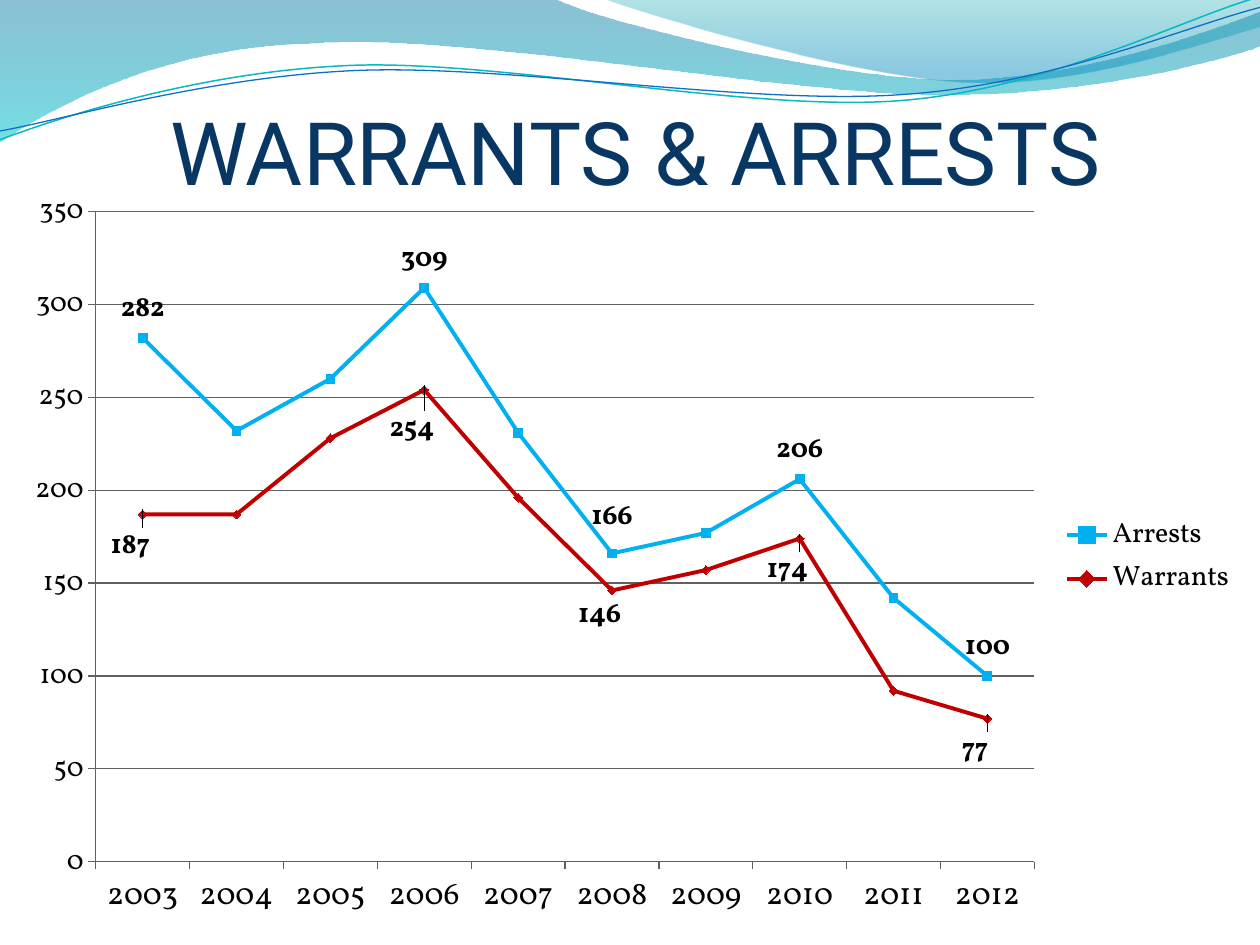
from math import cos, radians, sin

from lxml.etree import SubElement
from pptx import Presentation
from pptx.chart.data import CategoryChartData
from pptx.dml.color import RGBColor
from pptx.enum.chart import (XL_CHART_TYPE, XL_LABEL_POSITION, XL_LEGEND_POSITION,
                             XL_MARKER_STYLE, XL_TICK_MARK)
from pptx.enum.text import MSO_ANCHOR, MSO_AUTO_SIZE, PP_ALIGN
from pptx.oxml import parse_xml
from pptx.oxml.ns import nsdecls, qn
from pptx.util import Inches, Pt

COLORS = {
    "title": "083763", "text": "000000", "grid": "606060",
    "arrests": "00B0F0", "warrants": "C00000",
    "deep": "0074A1", "aqua": "00C6CF", "teal": "00A1A9", "sky": "008BBF",
    "teal_line": "0AB8BF", "blue_line": "0F6FC6",
}
YEARS = [str(year) for year in range(2003, 2013)]
LABELLED_YEARS = ["2003", "2006", "2008", "2010", "2012"]
ARRESTS = [282, 232, 260, 309, 231, 166, 177, 206, 142, 100]
WARRANTS = [187, 187, 228, 254, 196, 146, 157, 174, 92, 77]
ARREST_SHIFTS = {"2008": (0, -0.01)}
WARRANT_SHIFTS = {"2003": (-0.01, 0.08), "2006": (-0.01, 0.09), "2008": (-0.01, 0.07),
                  "2010": (-0.01, 0.08), "2012": (-0.01, 0.08)}
CHART_BOX = (0.08, 1.42, 9.83, 6)
PLOT_BOX = (0.76, 1.68, 7.45, 5.16)
RIPPLE_TILT = 2.7

LEFT_WAVE = [
    [(0, 0)], [(4.4, -0.01)],
    [(4.76, 0.17), (6.64, 0.63), (7.58, 0.63)],
    [(8.53, 0.63), (9.58, 0.26), (10, 0.09)], [(10.01, 0.36)],
    [(9.83, 0.44), (8.7, 0.76), (7.46, 0.75)],
    [(6.22, 0.75), (3.82, 0.28), (2.57, 0.34)],
    [(1.29, 0.36), (0.46, 0.83), (-0.01, 1.13)],
]
RIGHT_WAVE = [
    [(4.79, -0.01)],
    [(5.09, 0.11), (6.82, 0.62), (7.69, 0.65)],
    [(8.56, 0.69), (9.61, 0.32), (10, 0.21)], [(10, 0)],
]
TEAL_RIPPLE = [
    [(0, 1.11)],
    [(0.48, 0.93), (1.58, 0.57), (2.77, 0.52)],
    [(3.95, 0.47), (5.93, 0.89), (7.13, 0.8)],
    [(8.33, 0.71), (9.38, 0.15), (9.98, -0.02)],
]
BLUE_RIPPLE = [
    [(0, 1.04)],
    [(0.47, 0.96), (1.64, 0.61), (2.83, 0.56)],
    [(4.03, 0.51), (5.97, 0.84), (7.17, 0.75)],
    [(8.36, 0.67), (9.41, 0.21), (10, 0.06)],
]


def rgb(name):
    return RGBColor.from_string(COLORS[name])


def add_curve(shapes, segments, close):
    start, *rest = [(Inches(x), Inches(y)) for segment in segments for x, y in segment]
    builder = shapes.build_freeform(*start)
    builder.add_line_segments(rest, close=close)
    curve = builder.convert_to_shape()
    curve.shadow.inherit = False
    lines = iter(list(curve._element.iter(qn("a:lnTo"))))
    for segment in segments[1:]:
        first, *others = [next(lines) for _ in segment]
        if others:
            first.tag = qn("a:cubicBezTo")
            for line in others:
                first.append(line[0])
                line.getparent().remove(line)
    return curve


def add_wave(slide, segments, stops):
    wave = add_curve(slide.shapes, segments, True)
    wave.line.fill.background()
    wave.fill.gradient()
    wave.fill.gradient_angle = 270
    for stop, (position, color, _) in zip(wave.fill.gradient_stops, stops):
        stop.position = position
        stop.color.rgb = rgb(color)
    gradient = wave._element.spPr.find(qn("a:gradFill"))
    for tint, (_, _, opacity) in zip(gradient.iter(qn("a:srgbClr")), stops):
        SubElement(tint, qn("a:alpha")).set("val", str(opacity * 1000))


def level_segments(segments):
    (left, first_y), (right, last_y) = segments[0][0], segments[-1][-1]
    middle_x, middle_y = (left + right) / 2, (first_y + last_y) / 2
    c, s = cos(radians(RIPPLE_TILT)), sin(radians(RIPPLE_TILT))
    return [[(middle_x + (x - middle_x) * c - (y - middle_y) * s,
              middle_y + (x - middle_x) * s + (y - middle_y) * c) for x, y in segment]
            for segment in segments]


def add_ripple(group, segments, color, width):
    ripple = add_curve(group.shapes, level_segments(segments), False)
    ripple.rotation = 360 - RIPPLE_TILT
    ripple.fill.background()
    ripple.line.color.rgb = rgb(color)
    ripple.line.width = Pt(width)


def set_font(font, size, color="text", name="Vollkorn", bold=False):
    font.size = Pt(size)
    font.name = name
    font.bold = bold
    font.color.rgb = rgb(color)


def set_title(slide, wording):
    title = slide.shapes.title
    title.left, title.top = Inches(0.17), Inches(0.67)
    title.width, title.height = Inches(9.75), Inches(0.94)
    frame = title.text_frame
    frame.text = wording
    frame.word_wrap = True
    frame.auto_size = MSO_AUTO_SIZE.NONE
    frame.vertical_anchor = MSO_ANCHOR.BOTTOM
    frame.margin_left = frame.margin_right = frame.margin_bottom = 0
    frame.margin_top = Inches(0.05)
    heading = frame.paragraphs[0]
    heading.alignment = PP_ALIGN.CENTER
    set_font(heading.runs[0].font, 50, "title", "Roboto")
    slide.shapes._spTree.append(title._element)


def set_layout(parent, index, **settings):
    old = parent.find(qn("c:layout"))
    if old is not None:
        parent.remove(old)
    rows = "".join(f'<c:{key} val="{value}"/>' for key, value in settings.items())
    parent.insert(index, parse_xml(
        f'<c:layout {nsdecls("c")}><c:manualLayout>{rows}</c:manualLayout></c:layout>'))


def style_axis(axis, size):
    set_font(axis.tick_labels.font, size)
    axis.major_tick_mark = XL_TICK_MARK.OUTSIDE
    axis.minor_tick_mark = XL_TICK_MARK.NONE
    axis.format.line.color.rgb = rgb("grid")
    axis.format.line.width = Pt(0.75)


def label_points(series, shifts):
    set_font(series.data_labels.font, 16, bold=True)
    series.data_labels.show_value = True
    series.data_labels.position = XL_LABEL_POSITION.ABOVE
    for index, year in enumerate(YEARS):
        if year not in LABELLED_YEARS or year in shifts:
            label = series.points[index].data_label
            set_font(label.font, 16, bold=True)
            label.position = XL_LABEL_POSITION.ABOVE
    for entry in series._element.iter(qn("c:dLbl")):
        year = YEARS[int(entry[0].get("val"))]
        if year in shifts:
            x, y = shifts[year]
            set_layout(entry, 1, x=x, y=y)
        else:
            del entry[1:]
            SubElement(entry, qn("c:delete")).set("val", "1")


def style_series(series, color, marker):
    series.smooth = False
    series.format.line.color.rgb = rgb(color)
    series.format.line.width = Pt(2.25)
    series.marker.style = marker
    series.marker.size = 5
    series.marker.format.fill.solid()
    series.marker.format.fill.fore_color.rgb = rgb(color)
    series.marker.format.line.color.rgb = rgb(color)


def add_line_chart(slide):
    counts = CategoryChartData()
    counts.categories = YEARS
    counts.add_series("Arrests", ARRESTS)
    counts.add_series("Warrants", WARRANTS)
    left, top, width, height = CHART_BOX
    chart = slide.shapes.add_chart(XL_CHART_TYPE.LINE_MARKERS, *map(Inches, CHART_BOX), counts).chart
    chart.has_title = False
    set_font(chart.font, 10)
    chart.plots[0].vary_by_categories = False
    style_axis(chart.category_axis, 18)
    style_axis(chart.value_axis, 16)
    gridlines = chart.value_axis.major_gridlines.format.line
    gridlines.color.rgb = rgb("grid")
    gridlines.width = Pt(0.75)
    chart.has_legend = True
    chart.legend.position = XL_LEGEND_POSITION.RIGHT
    chart.legend.include_in_layout = False
    set_font(chart.legend.font, 16)
    arrests, warrants = chart.plots[0].series
    style_series(arrests, "arrests", XL_MARKER_STYLE.SQUARE)
    style_series(warrants, "warrants", XL_MARKER_STYLE.DIAMOND)
    label_points(arrests, ARREST_SHIFTS)
    label_points(warrants, WARRANT_SHIFTS)
    x, y, w, h = PLOT_BOX
    set_layout(chart._chartSpace.chart.plotArea, 0, layoutTarget="inner",
               xMode="edge", yMode="edge", x=(x - left) / width, y=(y - top) / height,
               w=w / width, h=h / height)


def main():
    deck = Presentation()
    deck.slide_width, deck.slide_height = Inches(10), Inches(7.5)
    slide = deck.slides.add_slide(deck.slide_layouts[5])
    add_wave(slide, LEFT_WAVE, [(0, "deep", 45), (1, "aqua", 55)])
    add_wave(slide, RIGHT_WAVE, [(0, "teal", 30), (0.8, "sky", 45)])
    ripples = slide.shapes.add_group_shape()
    add_ripple(ripples, TEAL_RIPPLE, "teal_line", 0.85)
    add_ripple(ripples, BLUE_RIPPLE, "blue_line", 0.75)
    set_title(slide, "WARRANTS & ARRESTS")
    add_line_chart(slide)
    deck.save("out.pptx")


if __name__ == "__main__":
    main()
